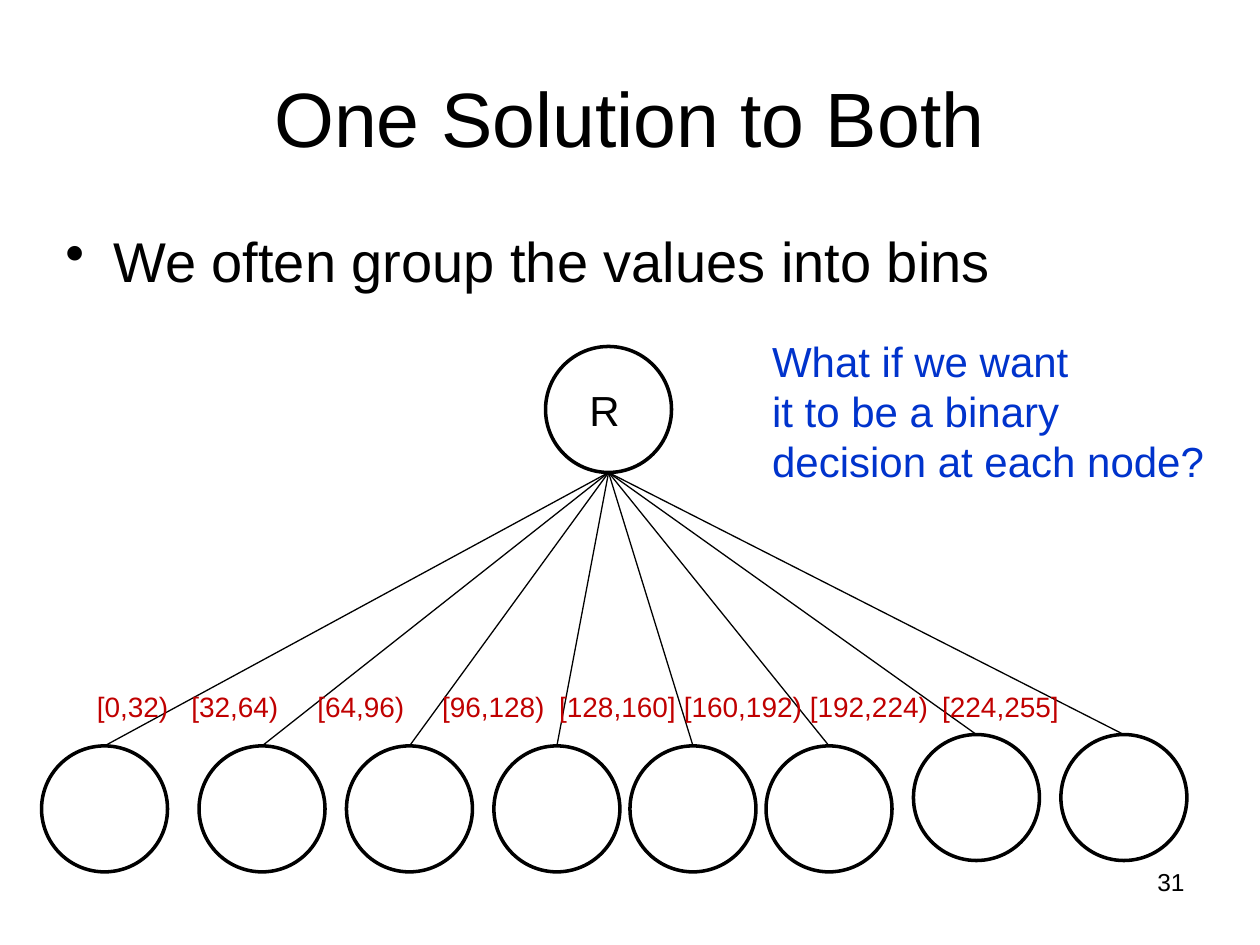
import pptx
import pptx.util
import pptx.dml.color
import pptx.enum.shapes
import pptx.enum.text
import pptx.oxml.xmlchemy
from pptx.util import Inches

THEME = {
    "font": "Arial",
    "black": "000000", "red": "C00000", "blue": "0033CC",
    "title": 44, "body": 32, "note": 24, "label": 16, "number": 14,
    "node_line": 2, "edge_line": 0.75,
}
TITLE = "One Solution to Both"
BULLET = "We often group the values into bins"
QUESTION = ["What if we want", "it to be a binary", "decision at each node?"]
BINS = ["[0,32)", "[32,64)", "[64,96)", "[96,128)",
        "[128,160]", "[160,192)", "[192,224)", "[224,255]"]
BIN_TABS = [0.75, 1.75, 2.74, 3.67, 4.66, 5.66, 6.71]
LEAVES = [(0.33, 5.92), (1.58, 5.92), (2.75, 5.92), (3.92, 5.92),
          (5, 5.92), (6.08, 5.92), (7.25, 5.83), (8.42, 5.83)]
ROOT = (4.33, 2.75)
DIAMETER = 1
ALIGN = pptx.enum.text.PP_ALIGN


def color(name):
    return pptx.dml.color.RGBColor.from_string(THEME[name])


def add_element(parent, tag, **attributes):
    element = pptx.oxml.xmlchemy.OxmlElement(tag)
    for name, value in attributes.items():
        element.set(name, str(value))
    parent.append(element)
    return element


def write(box, lines, size, ink="black", align=ALIGN.LEFT):
    frame = box.text_frame
    for index, line in enumerate(lines):
        para = frame.add_paragraph() if index else frame.paragraphs[0]
        para.alignment = align
        span = para.add_run()
        span.text = line
        span.font.name = THEME["font"]
        span.font.size = pptx.util.Pt(THEME[size])
        span.font.color.rgb = color(ink)
    return frame.paragraphs[0]


def add_text(page, place, lines, size, ink="black", align=ALIGN.LEFT, wrap=False):
    box = page.shapes.add_textbox(*map(Inches, place))
    box.text_frame.word_wrap = wrap
    return write(box, lines, size, ink, align)


def add_node(page, corner):
    node = page.shapes.add_shape(
        pptx.enum.shapes.MSO_SHAPE.OVAL,
        *map(Inches, (*corner, DIAMETER, DIAMETER)))
    node.shadow.inherit = False
    node.fill.background()
    node.line.color.rgb = color("black")
    node.line.width = pptx.util.Pt(THEME["node_line"])
    return node


def add_edge(page, root, leaf):
    start = root.left + root.width // 2, root.top + root.height
    end = leaf.left + leaf.width // 2, leaf.top
    edge = page.shapes.add_connector(
        pptx.enum.shapes.MSO_CONNECTOR.STRAIGHT, *start, *end)
    edge.end_connect(leaf, 0)
    edge.line.color.rgb = color("black")
    edge.line.width = pptx.util.Pt(THEME["edge_line"])
    add_element(edge._element.spPr, "a:effectLst")


def add_bullet(para):
    para.space_before = pptx.util.Pt(THEME["body"] * 0.2)
    properties = para._p.get_or_add_pPr()
    properties.set("marL", str(Inches(0.38)))
    properties.set("indent", str(-Inches(0.38)))
    add_element(properties, "a:buChar", char="•")


def add_tabs(para, positions):
    tabs = add_element(para._p.get_or_add_pPr(), "a:tabLst")
    for position in positions:
        add_element(tabs, "a:tab", pos=Inches(position), algn="l")


def main():
    deck = pptx.Presentation()
    deck.slide_width, deck.slide_height = Inches(10), Inches(7.5)
    page = deck.slides.add_slide(deck.slide_layouts[5])

    title = page.shapes.title
    title.left, title.top, title.width, title.height = map(
        Inches, (0.5, 0.3, 9, 1.25))
    title.text_frame.vertical_anchor = pptx.enum.text.MSO_ANCHOR.MIDDLE
    write(title, [TITLE], "title", align=ALIGN.CENTER)

    add_bullet(add_text(page, (0.42, 1.75, 9, 4.95), [BULLET], "body", wrap=True))
    add_text(page, (7.17, 6.83, 2.33, 0.52), ["31"], "number",
             align=ALIGN.RIGHT, wrap=True)

    root = add_node(page, ROOT)
    add_text(page, (4.58, 3, 0.45, 0.51), ["R"], "note")
    leaves = [add_node(page, corner) for corner in LEAVES]
    for leaf in leaves:
        add_edge(page, root, leaf)

    labels = add_text(page, (0.67, 5.42, 7.9, 0.37), ["\t".join(BINS)],
                      "label", "red")
    add_tabs(labels, BIN_TABS)
    add_text(page, (6.03, 2.61, 3.67, 1.31), QUESTION, "note", "blue")

    deck.save("out.pptx")


if __name__ == "__main__":
    main()
